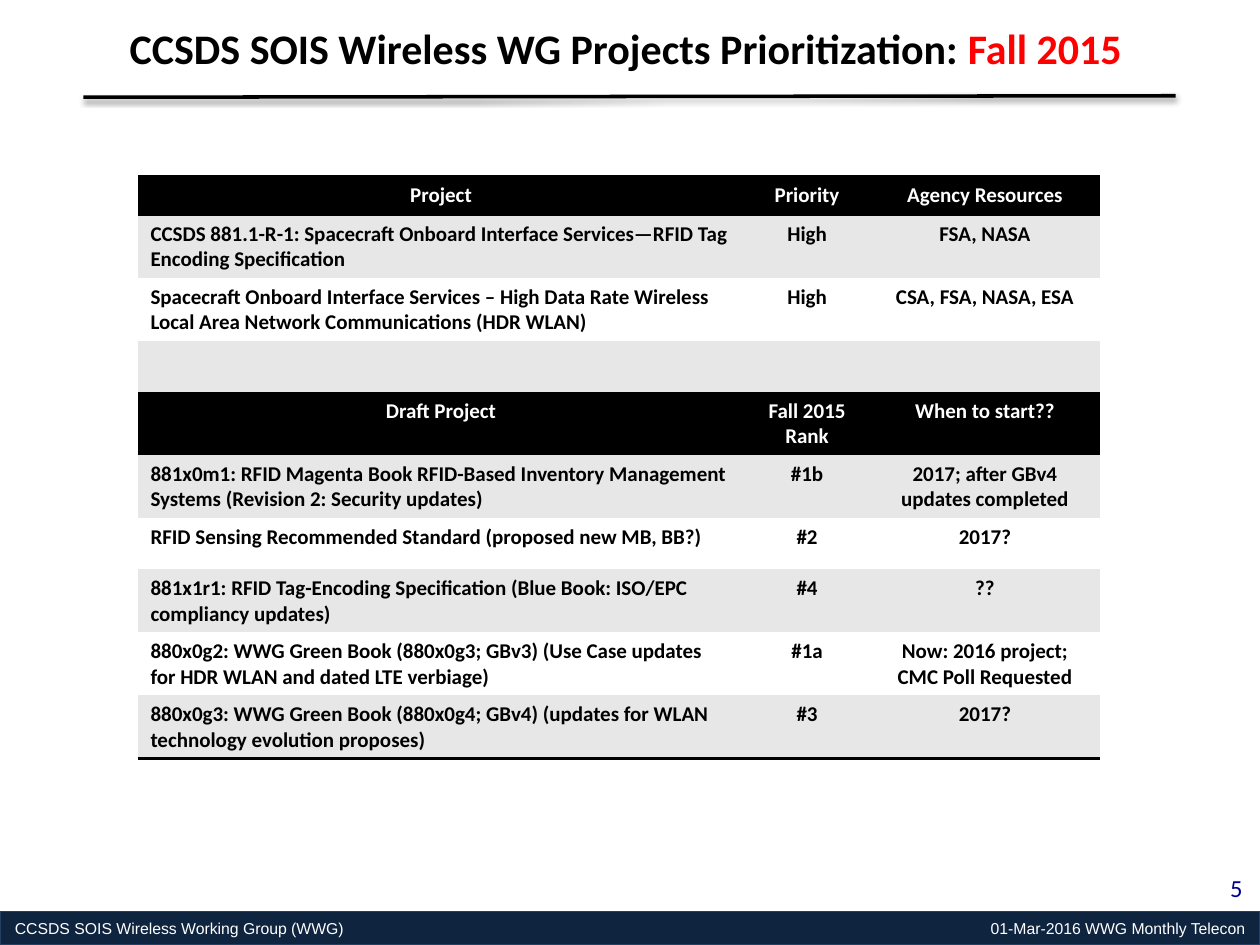
from pptx import Presentation
from pptx.dml.color import RGBColor
from pptx.enum.shapes import MSO_CONNECTOR, MSO_SHAPE
from pptx.enum.text import MSO_ANCHOR, MSO_AUTO_SIZE, PP_ALIGN
from pptx.oxml import parse_xml
from pptx.oxml.ns import nsdecls, qn
from pptx.util import Cm, Pt

LEFT, CENTER, RIGHT = PP_ALIGN.LEFT, PP_ALIGN.CENTER, PP_ALIGN.RIGHT
TOP, MIDDLE = MSO_ANCHOR.TOP, MSO_ANCHOR.MIDDLE
NO_AUTOFIT = MSO_AUTO_SIZE.NONE
RECTANGLE = MSO_SHAPE.RECTANGLE
STRAIGHT = MSO_CONNECTOR.STRAIGHT

TITLE_ONLY = 5
PLAIN_TABLE = "{2D5ABB26-0587-4C30-8999-92F81FD0307C}"
BLACK, WHITE, GRAY = "000000", "FFFFFF", "E7E7E7"
COLUMN_WIDTHS = (12.22, 2.54, 4.63)
PROJECTS = [
    (0.78, ("Project", "Priority", "Agency Resources")),
    (1.26, ("CCSDS 881.1-R-1: Spacecraft Onboard Interface Services—RFID Tag Encoding Specification",
            "High", "FSA, NASA")),
    (1.26, ("Spacecraft Onboard Interface Services – High Data Rate Wireless Local Area Network "
            "Communications (HDR WLAN)", "High", "CSA, FSA, NASA, ESA")),
    (1.03, ("", "", "")),
    (1.26, ("Draft Project", "Fall 2015 Rank", "When to start??")),
    (1.26, ("881x0m1: RFID Magenta Book RFID-Based Inventory Management Systems "
            "(Revision 2: Security updates)", "#1b", "2017; after GBv4 updates completed")),
    (1.03, ("RFID Sensing Recommended Standard (proposed new MB, BB?)", "#2", "2017?")),
    (1.26, ("881x1r1: RFID Tag-Encoding Specification (Blue Book: ISO/EPC compliancy updates)",
            "#4", "??")),
    (1.26, ("880x0g2: WWG Green Book (880x0g3; GBv3) (Use Case updates for HDR WLAN and dated "
            "LTE verbiage)", "#1a", "Now: 2016 project; CMC Poll Requested")),
    (1.26, ("880x0g3: WWG Green Book (880x0g4; GBv4) (updates for WLAN technology evolution "
            "proposes)", "#3", "2017?")),
]
HEADINGS = (0, 4)


def rgb(value):
    return RGBColor.from_string(value)


class SlideBuilder:
    """Holds the text style and the current slide, and adds each kind of element."""

    def __init__(self, slide, font="Calibri"):
        self.slide = slide
        self.font = font

    def style(self, paragraph, size, colors, align=LEFT, bold=False, font=None):
        paragraph.alignment = align
        for run, color in zip(paragraph.runs, colors):
            run.font.name = font or self.font
            run.font.size = Pt(size)
            run.font.bold = bold
            run.font.color.rgb = rgb(color)

    def title(self, box, parts, colors):
        title = self.slide.shapes.title
        title.left, title.top, title.width, title.height = map(Cm, box)
        frame = title.text_frame
        frame.auto_size = NO_AUTOFIT
        frame.word_wrap = False
        frame.vertical_anchor = TOP
        paragraph = frame.paragraphs[0]
        for part in parts:
            paragraph.add_run().text = part
        self.style(paragraph, 24, colors, bold=True)

    def rule(self, start, end):
        rule = self.slide.shapes.add_connector(STRAIGHT, *map(Cm, start + end))
        rule.line.color.rgb = rgb(BLACK)
        rule.line.width = Pt(2)
        rule._element.spPr.append(parse_xml(
            f'<a:effectLst {nsdecls("a")}><a:outerShdw blurRad="{Pt(3.1)}" dist="{Pt(1.6)}" '
            f'dir="5400000" rotWithShape="0"><a:srgbClr val="{BLACK}"><a:alpha val="38000"/>'
            '</a:srgbClr></a:outerShdw></a:effectLst>'))

    def footer(self, box, group, occasion):
        bar = self.slide.shapes.add_shape(RECTANGLE, *map(Cm, box))
        bar.shadow.inherit = False
        bar.fill.solid()
        bar.fill.fore_color.rgb = rgb("0F243E")
        bar.line.color.rgb = rgb("254061")
        bar.line.width = Pt(0.75)
        frame = bar.text_frame
        frame.margin_left = frame.margin_right = Cm(0.3)
        frame.margin_top = frame.margin_bottom = Cm(0)
        frame.vertical_anchor = MIDDLE
        frame.text = f"{group}\t{occasion}"
        paragraph = frame.paragraphs[0]
        self.style(paragraph, 9, [WHITE], font="Arial")
        paragraph._p.get_or_add_pPr().append(parse_xml(
            f'<a:tabLst {nsdecls("a")}><a:tab pos="{Cm(24.8)}" algn="r"/></a:tabLst>'))

    def page_number(self, box, number):
        frame = self.slide.shapes.add_textbox(*map(Cm, box)).text_frame
        frame.word_wrap = True
        frame.text = number
        self.style(frame.paragraphs[0], 14, ["000090"], RIGHT)

    def border(self, cell, sides):
        properties = cell._tc.get_or_add_tcPr()
        for position, side in enumerate(sides):
            properties.insert(position, parse_xml(
                f'<a:ln{side} {nsdecls("a")} w="{Pt(2)}"><a:solidFill><a:srgbClr val="{BLACK}"/>'
                f'</a:solidFill></a:ln{side}>'))

    def table(self, left, top, widths, rows, headings):
        height = sum(row_height for row_height, _ in rows)
        table = self.slide.shapes.add_table(
            len(rows), len(widths), Cm(left), Cm(top), Cm(sum(widths)), Cm(height)).table
        table._tbl.tblPr.find(qn("a:tableStyleId")).text = PLAIN_TABLE
        for column, width in zip(table.columns, widths):
            column.width = Cm(width)
        borders = {0: "TB", len(rows) - 1: "B"}
        for r, (row_height, texts) in enumerate(rows):
            table.rows[r].height = Cm(row_height)
            heading = r in headings
            fill = BLACK if heading else GRAY if r % 2 else WHITE
            for c, text in enumerate(texts):
                cell = table.cell(r, c)
                cell.fill.solid()
                cell.fill.fore_color.rgb = rgb(fill)
                self.border(cell, borders.get(r, ""))
                if text:
                    cell.text_frame.text = text
                    self.style(cell.text_frame.paragraphs[0], 12, [WHITE if heading else BLACK],
                               CENTER if heading or c else LEFT, bold=True)


def main():
    presentation = Presentation()
    presentation.slide_width, presentation.slide_height = Cm(25.4), Cm(19.05)
    builder = SlideBuilder(presentation.slides.add_slide(presentation.slide_layouts[TITLE_ONLY]))
    builder.footer((0, 18.38, 25.4, 0.67), "CCSDS SOIS Wireless Working Group (WWG)",
                   "01-Mar-2016 WWG Monthly Telecon")
    builder.page_number((23.62, 17.48, 1.68, 0.89), "5")
    builder.table(2.78, 3.55, COLUMN_WIDTHS, PROJECTS, HEADINGS)
    builder.title((2.36, 0.33, 20.78, 1.27),
                  ("CCSDS SOIS Wireless WG Projects Prioritization: ", "Fall 2015"),
                  (BLACK, "FF0000"))
    builder.rule((1.68, 1.96), (23.7, 1.93))
    presentation.save("out.pptx")


if __name__ == "__main__":
    main()
